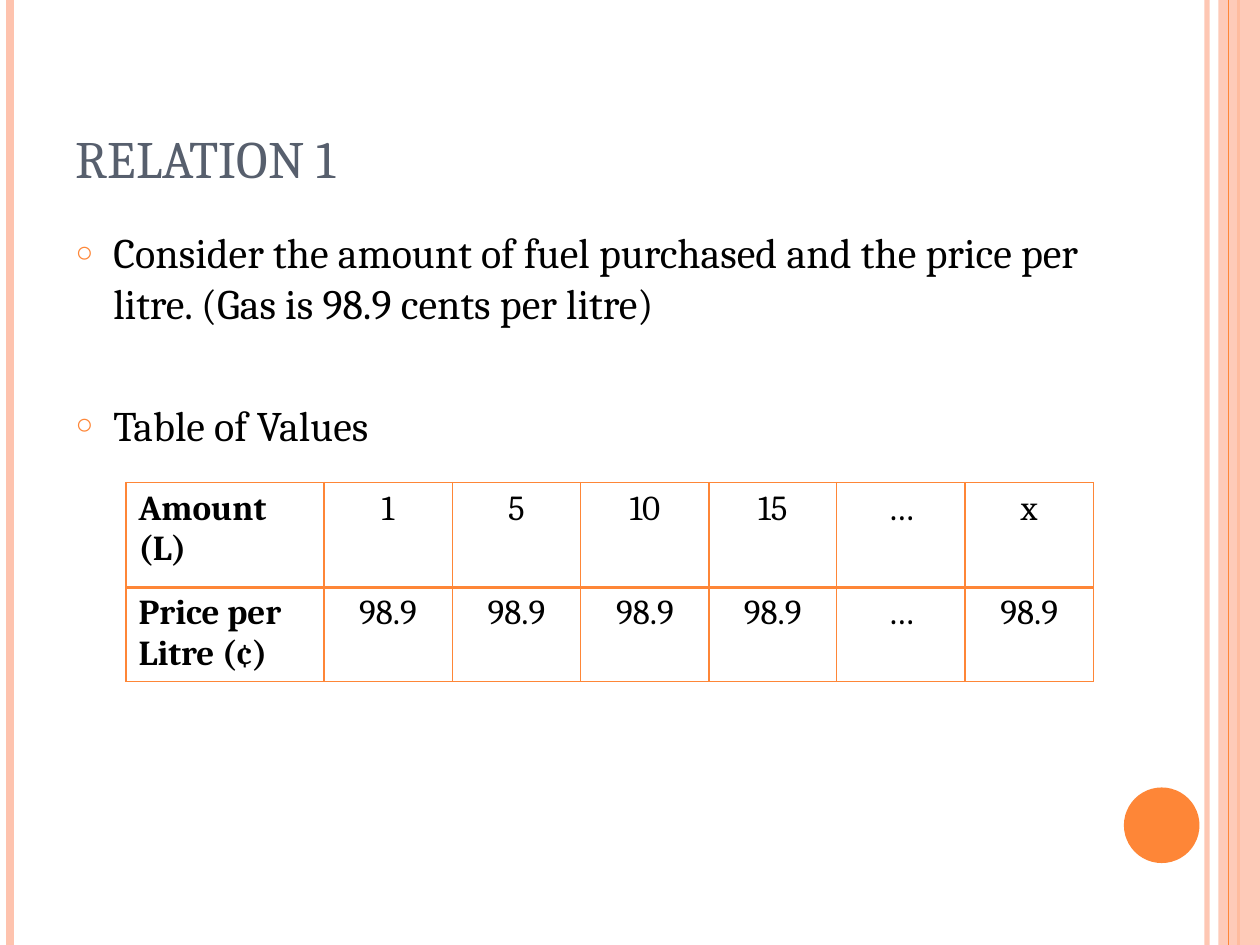
import pptx
import pptx.dml.color
import pptx.enum.shapes
import pptx.enum.text
import pptx.oxml
import pptx.oxml.ns
import pptx.util
from dataclasses import dataclass
from lxml import etree

PX = 9144  # 100 px to the inch
qn = pptx.oxml.ns.qn
Pt = pptx.util.Pt
ALIGN = pptx.enum.text.PP_ALIGN


@dataclass(frozen=True)
class Theme:
    font: str = "Cambria"
    ink: str = "000000"
    head: str = "575F6D"
    main: str = "FE8637"
    pale: str = "FEC3AE"
    big: int = 30
    mid: int = 24
    small: int = 20


def rgb(code):
    return pptx.dml.color.RGBColor.from_string(code)


def fade(shape, alpha):
    """Set the opacity, in percent, of every colour in the shape."""
    for tint in shape._element.iter(qn("a:srgbClr")):
        etree.SubElement(tint, qn("a:alpha")).set("val", str(alpha * 1000))


def write(para, text, *, font, size, color, bold=False, align=ALIGN.LEFT, before=0):
    run = para.add_run()
    run.text = text
    run.font.name = font
    run.font.size = Pt(size)
    run.font.bold = bold
    run.font.color.rgb = rgb(color)
    para.alignment = align
    para.space_before = Pt(before)


def mark(para, sign, color, percent, indent):
    """Give the paragraph a hanging bullet."""
    props = para._p.get_or_add_pPr()
    props.set("marL", str(indent * PX))
    props.set("indent", str(-indent * PX))
    tint = etree.SubElement(props, qn("a:buClr"))
    etree.SubElement(tint, qn("a:srgbClr")).set("val", color)
    etree.SubElement(props, qn("a:buSzPct")).set("val", str(percent * 1000))
    etree.SubElement(props, qn("a:buChar")).set("char", sign)


def edge(cell, color, **widths):
    """Draw cell borders; widths in points are keyed L, R, T and B."""
    props = cell._tc.get_or_add_tcPr()
    for side, width in widths.items():
        line = etree.SubElement(props, qn("a:ln" + side), w=str(Pt(width)))
        fill = etree.SubElement(line, qn("a:solidFill"))
        etree.SubElement(fill, qn("a:srgbClr")).set("val", color)


class Page:
    """Holds the theme and the current slide."""

    def __init__(self, deck, theme):
        self.theme = theme
        self.slide = deck.slides.add_slide(deck.slide_layouts[1])
        self.shapes = self.slide.shapes

    def rule(self, x, color, width, alpha=100):
        """Draw a line down the whole slide."""
        line = self.shapes.add_connector(
            pptx.enum.shapes.MSO_CONNECTOR.STRAIGHT, x * PX, 0, x * PX, 750 * PX)
        line.line.color.rgb = rgb(color)
        line.line.width = Pt(width)
        etree.SubElement(line._element.spPr, qn("a:effectLst"))
        if alpha < 100:
            fade(line, alpha)

    def block(self, kind, box, color, alpha=100):
        shape = self.shapes.add_shape(kind, *(n * PX for n in box))
        shape.shadow.inherit = False
        shape.fill.solid()
        shape.fill.fore_color.rgb = rgb(color)
        shape.line.fill.background()
        if alpha < 100:
            fade(shape, alpha)

    def holder(self, index, box, anchor):
        """Place a placeholder on top and return its text frame."""
        item = self.slide.placeholders[index]
        self.shapes._spTree.append(item._element)
        item.left, item.top, item.width, item.height = (n * PX for n in box)
        frame = item.text_frame
        frame.word_wrap = True
        frame.auto_size = pptx.enum.text.MSO_AUTO_SIZE.NONE
        frame.vertical_anchor = anchor
        return frame

    def title(self, text, box):
        frame = self.holder(0, box, pptx.enum.text.MSO_ANCHOR.BOTTOM)
        look = self.theme
        write(frame.paragraphs[0], text, font=look.font, size=look.big, color=look.head)

    def bullets(self, items, box):
        frame = self.holder(1, box, pptx.enum.text.MSO_ANCHOR.TOP)
        look = self.theme
        for i, (text, before) in enumerate(items):
            para = frame.add_paragraph() if i else frame.paragraphs[0]
            write(para, text, font=look.font, size=look.mid, color=look.ink, before=before)
            mark(para, "○", look.main, 70, 30)

    def table(self, rows, spot, wide, high):
        look = self.theme
        size = sum(wide), sum(high)
        grid = self.shapes.add_table(
            len(rows), len(wide), *(n * PX for n in spot + size)).table
        grid.first_row = grid.horz_banding = False
        for col, width in zip(grid.columns, wide):
            col.width = width * PX
        for r, (row, height) in enumerate(zip(rows, high)):
            grid.rows[r].height = height * PX
            for c, text in enumerate(row):
                cell = grid.cell(r, c)
                write(cell.text_frame.paragraphs[0], text, font=look.font,
                      size=look.small, color=look.ink, bold=c == 0,
                      align=ALIGN.CENTER if c else ALIGN.LEFT)
                edge(cell, look.main, L=1, R=1, T=2 if r else 1,
                     B=1 if r == len(rows) - 1 else 2)
                cell.fill.background()


def main():
    deck = pptx.Presentation()
    deck.slide_width, deck.slide_height = 1000 * PX, 750 * PX
    look = Theme()
    page = Page(deck, look)
    form = pptx.enum.shapes.MSO_SHAPE

    page.rule(958, look.pale, 3, alpha=93)
    page.rule(8, look.pale, 4.5)
    page.rule(983, look.main, 1.5)
    page.block(form.RECTANGLE, (967, 0, 33, 750), look.pale, alpha=87)
    page.rule(975, look.main, 0.75)
    page.block(form.OVAL, (892, 625, 60, 60), look.main)

    page.title("RELATION 1", (50, 30, 817, 125))
    page.bullets([
        ("Consider the amount of fuel purchased and the price per litre. "
         "(Gas is 98.9 cents per litre)", 6),
        ("Table of Values", 41),
    ], (50, 175, 817, 533))

    amounts = ["1", "5", "10", "15", "…", "x"]
    prices = ["…" if amount == "…" else "98.9" for amount in amounts]
    page.table([["Amount (L)"] + amounts, ["Price per Litre (¢)"] + prices],
               (100, 383), [157] + [102] * 3 + [101] + [102] * 2, [83, 75])
    deck.save("out.pptx")


if __name__ == "__main__":
    main()
